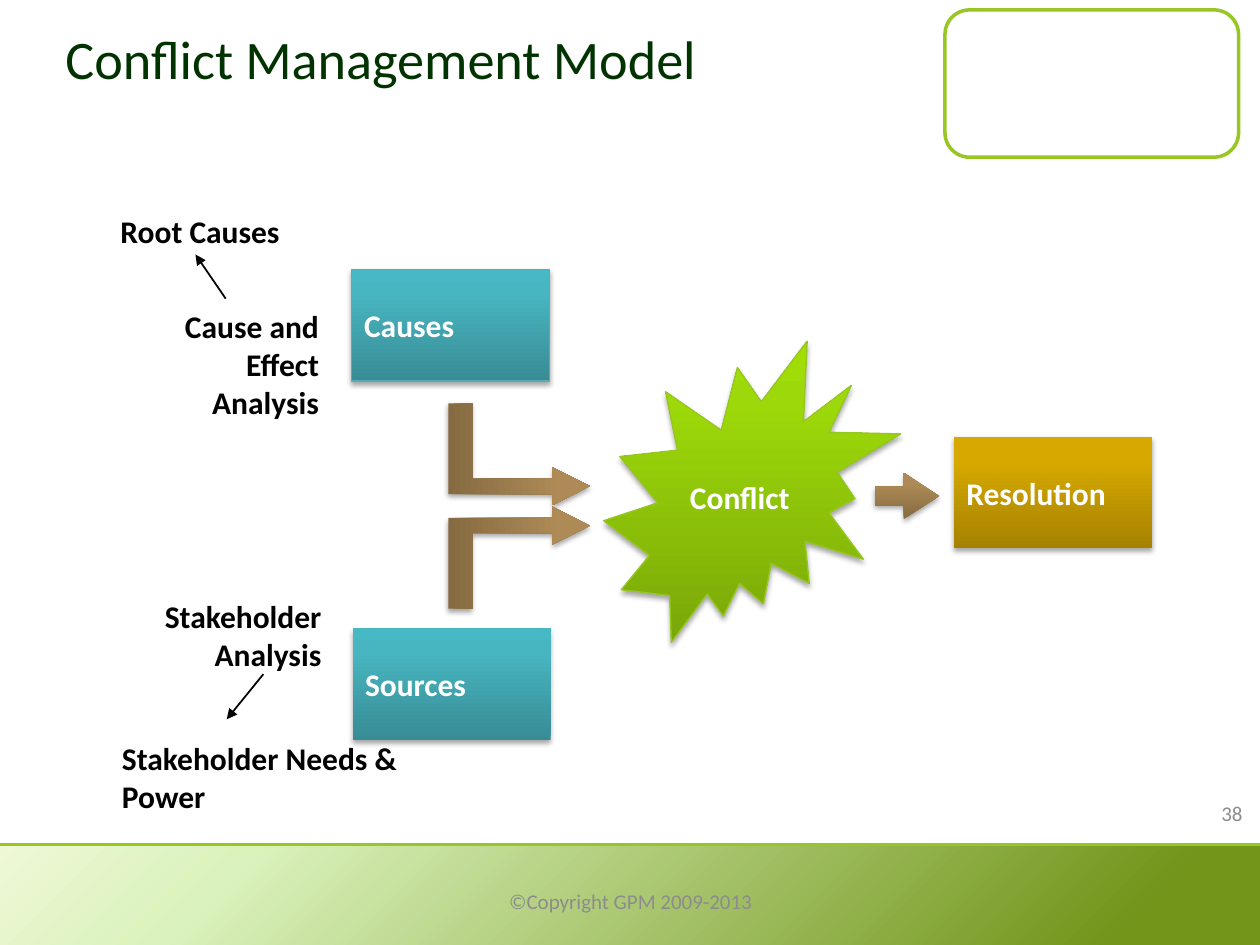
from lxml import etree
from pptx import Presentation
from pptx.dml.color import RGBColor
from pptx.enum.shapes import MSO_CONNECTOR, MSO_SHAPE
from pptx.enum.text import MSO_ANCHOR, PP_ALIGN
from pptx.oxml.ns import qn
from pptx.util import Cm, Pt

RECTANGLE, ROUNDED = MSO_SHAPE.RECTANGLE, MSO_SHAPE.ROUNDED_RECTANGLE
BURST, RIGHT_ARROW = MSO_SHAPE.EXPLOSION2, MSO_SHAPE.RIGHT_ARROW
STRAIGHT = MSO_CONNECTOR.STRAIGHT
LEFT, CENTER, RIGHT = PP_ALIGN.LEFT, PP_ALIGN.CENTER, PP_ALIGN.RIGHT
TOP, MIDDLE = MSO_ANCHOR.TOP, MSO_ANCHOR.MIDDLE

COLORS = {
    "white": "FFFFFF", "black": "000000", "title": "003300", "grey": "8C8C8C",
    "lime": "98C723", "burst edge": "96C71E", "teal edge": "55AEB7",
}
GRADIENTS = {
    "footer": [(0, "EEF8D5"), (19, "DAF2BC"), (89, "72951A")],
    "green": [(0, "79A708"), (80, "9DD90A"), (100, "A0DE06")],
    "teal": [(0, "388C95"), (80, "48B6C1"), (100, "46B9C4")],
    "gold": [(0, "A68200"), (80, "D7A900"), (100, "D8A900")],
    "brown": [(0, "866B42"), (80, "AE8B56"), (100, "B08C54")],
}


def paint(shape, gradient, angle=90, edge=None, shadow=True):
    shape.fill.gradient()
    shape.fill.gradient_angle = angle
    properties = shape._element.spPr
    stops = properties.find(".//" + qn("a:gsLst"))
    for stop in list(stops):
        stops.remove(stop)
    for position, color in GRADIENTS[gradient]:
        stop = etree.SubElement(stops, qn("a:gs"), pos=str(position * 1000))
        etree.SubElement(stop, qn("a:srgbClr"), val=color)
    if edge:
        shape.line.color.rgb = RGBColor.from_string(COLORS[edge])
        shape.line.width = Pt(0.75)
    else:
        shape.line.fill.background()
    shape.shadow.inherit = False
    if shadow:
        outer = etree.SubElement(
            properties.find(qn("a:effectLst")), qn("a:outerShdw"),
            blurRad=str(Pt(3.1)), dist=str(Pt(1.8)), dir="5400000", rotWithShape="0")
        tint = etree.SubElement(outer, qn("a:srgbClr"), val=COLORS["black"])
        etree.SubElement(tint, qn("a:alpha"), val="35000")


def write(shape, text, size, color, bold=False, align=LEFT, anchor=MIDDLE, wrap=True):
    frame = shape.text_frame
    frame.text = text
    frame.word_wrap = wrap
    frame.vertical_anchor = anchor
    paragraph = frame.paragraphs[0]
    paragraph.alignment = align
    font = paragraph.runs[0].font
    font.name, font.size, font.bold = "Calibri", Pt(size), bold
    font.color.rgb = RGBColor.from_string(COLORS[color])


prs = Presentation()
prs.slide_width, prs.slide_height = Cm(25.4), Cm(19.05)
shapes = prs.slides.add_slide(prs.slide_layouts[6]).shapes

corner_frame = shapes.add_shape(ROUNDED, Cm(19.05), Cm(0.2), Cm(5.92), Cm(2.97))
corner_frame.fill.solid()
corner_frame.fill.fore_color.rgb = RGBColor.from_string(COLORS["white"])
corner_frame.line.color.rgb = RGBColor.from_string(COLORS["lime"])
corner_frame.line.width = Pt(2)
corner_frame.shadow.inherit = False

footer_band = shapes.add_shape(RECTANGLE, 0, Cm(17.04), Cm(25.4), Cm(2.01))
paint(footer_band, "footer", angle=315, shadow=False)

title = shapes.add_textbox(Cm(1.07), 0, Cm(17.78), Cm(2.34))
write(title, "Conflict Management Model", 31, "title")

for kind, text, left, top, width, height, gradient, edge in [
    (BURST, "Conflict", 12.17, 6.88, 5.99, 6.07, "green", "burst edge"),
    (RECTANGLE, "Causes", 7.09, 5.44, 3.99, 2.24, "teal", "teal edge"),
    (RECTANGLE, "Sources", 7.11, 12.67, 3.99, 2.24, "teal", None),
    (RECTANGLE, "Resolution", 19.23, 8.81, 3.99, 2.24, "gold", None),
]:
    stage = shapes.add_shape(kind, Cm(left), Cm(top), Cm(width), Cm(height))
    paint(stage, gradient, edge=edge)
    write(stage, text, 18, "white", bold=True, wrap=False)

MIRROR_Y = 10.2
BENT_ARROW = [
    (11.89, 9.8), (11.13, 9.42), (11.13, 9.65), (9.53, 9.65), (9.53, 8.13),
    (9.04, 8.13), (9.04, 9.96), (11.13, 9.96), (11.13, 10.19),
]
for side in (1, -1):
    corners = [(Cm(x), Cm(MIRROR_Y + side * (y - MIRROR_Y))) for x, y in BENT_ARROW]
    outline = shapes.build_freeform(*corners[0])
    outline.add_line_segments(corners[1:], close=True)
    paint(outline.convert_to_shape(), "brown", angle=0)

outcome_arrow = shapes.add_shape(RIGHT_ARROW, Cm(17.63), Cm(9.53), Cm(1.3), Cm(0.94))
outcome_arrow.adjustments[0] = 0.4
outcome_arrow.adjustments[1] = 0.76
paint(outcome_arrow, "brown")

for text, left, top, width, height, align, wrap in [
    ("Cause and Effect Analysis", 2.44, 6.07, 4.24, 2.57, RIGHT, True),
    ("Root Causes", 2.18, 4.14, 3.73, 1.04, LEFT, False),
    ("Stakeholder Analysis", 2.74, 11.91, 3.99, 1.8, RIGHT, True),
    ("Stakeholder Needs & Power", 2.21, 14.78, 6.27, 1.8, LEFT, True),
]:
    label = shapes.add_textbox(Cm(left), Cm(top), Cm(width), Cm(height))
    write(label, text, 18, "black", bold=True, align=align, anchor=TOP, wrap=wrap)

for x1, y1, x2, y2, color, width, pointed in [
    (0, 17.02, 25.4, 17.02, "lime", 1.5, False),
    (4.55, 6.02, 3.94, 5.13, "black", 1, True),
    (5.31, 13.59, 4.57, 14.5, "black", 1, True),
]:
    rule = shapes.add_connector(STRAIGHT, Cm(x1), Cm(y1), Cm(x2), Cm(y2))
    rule.line.color.rgb = RGBColor.from_string(COLORS[color])
    rule.line.width = Pt(width)
    if pointed:
        etree.SubElement(rule.line._get_or_add_ln(), qn("a:tailEnd"), type="triangle")
    etree.SubElement(rule._element.spPr, qn("a:effectLst"))

for text, left, top, width, align in [
    ("©Copyright GPM 2009-2013", 8.69, 17.65, 8.05, CENTER),
    ("38", 19.38, 15.88, 5.92, RIGHT),
]:
    note = shapes.add_textbox(Cm(left), Cm(top), Cm(width), Cm(1.02))
    write(note, text, 12, "grey", align=align)

prs.save("out.pptx")
